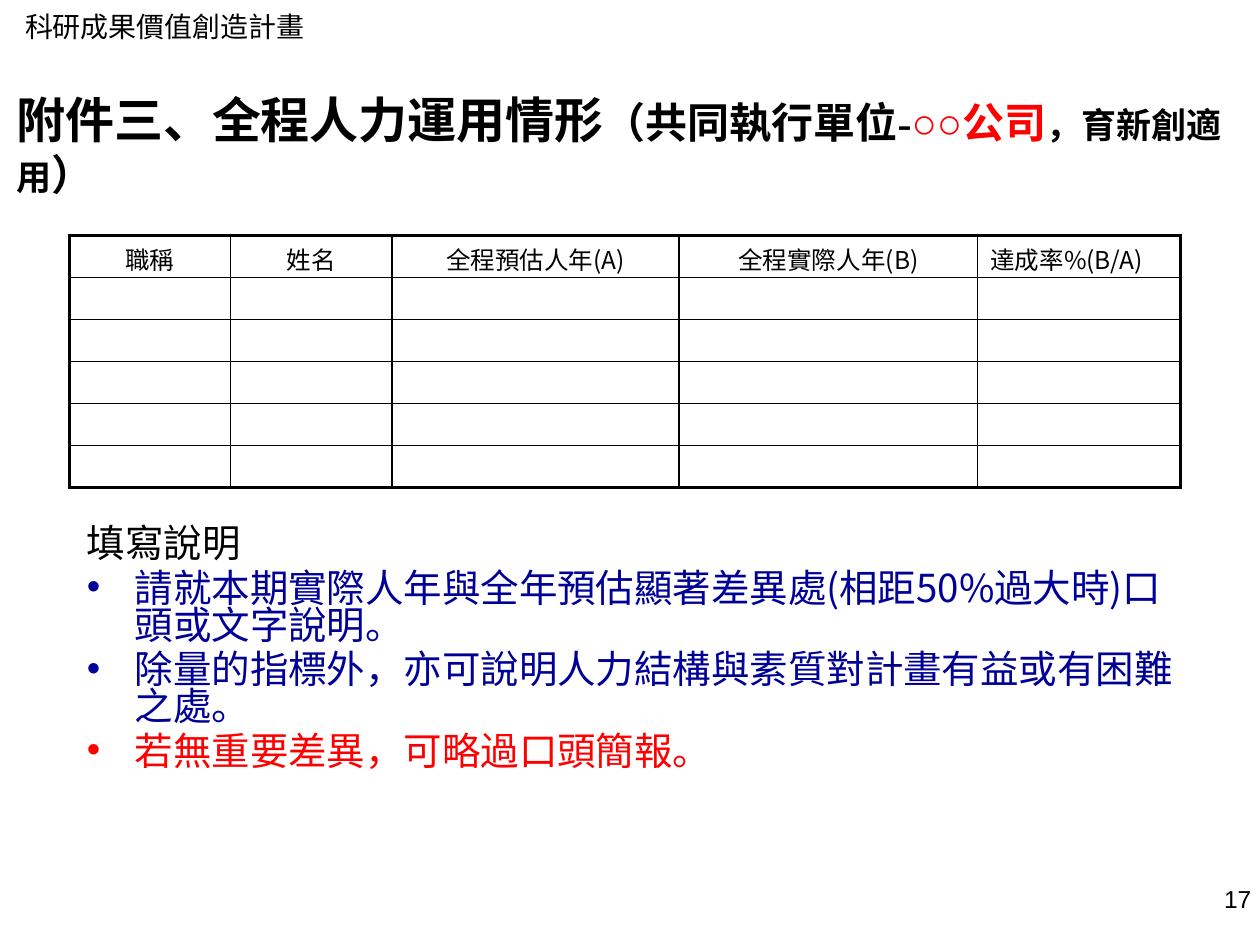
"""Build the staffing overview slide with its table and filling notes."""
import pptx
import pptx.dml.color
import pptx.enum.text
import pptx.oxml
import pptx.oxml.ns
import pptx.util
from lxml import etree

Pt, In = pptx.util.Pt, pptx.util.Inches
qn = pptx.oxml.ns.qn
enum = pptx.enum.text
NOTO = "Noto Sans CJK SC"

deck = pptx.Presentation()
deck.slide_width, deck.slide_height = In(10), In(7.5)
slide = deck.slides.add_slide(deck.slide_layouts[1])


def write(para, text, tint="000000", face=NOTO, **form):
    run = para.add_run()
    run.text = text
    for key, value in {"name": face, **form}.items():
        setattr(run.font, key, value)
    run.font.color.rgb = pptx.dml.color.RGBColor.from_string(tint)
    east = etree.SubElement(run.font._element, qn("a:ea"))
    east.set("typeface", NOTO)


def place(shape, left, top, wide, high):
    spot = {"left": left * deck.slide_width, "top": top * deck.slide_height,
            "width": wide * deck.slide_width, "height": high * deck.slide_height}
    for key, value in spot.items():
        setattr(shape, key, round(value / 100))
    if shape.has_text_frame:
        look = {"word_wrap": True, "auto_size": enum.MSO_AUTO_SIZE.NONE,
                "vertical_anchor": enum.MSO_ANCHOR.TOP}
        for key, value in look.items():
            setattr(shape.text_frame, key, value)
        return shape.text_frame


head = place(slide.shapes.title, 0.3, 8.8, 98.5, 13.07).paragraphs[0]
head.alignment = enum.PP_ALIGN.LEFT
for text, size, tint in [
    ("附件三、全程人力運用情形", 28, "000000"),
    ("（共同執行單位-", 24, "000000"),
    ("○○公司", 24, "FF0000"),
    ("，育新創適用", 20, "000000"),
    ("）", 24, "000000"),
]:
    write(head, text, tint, "Times New Roman", size=Pt(size), bold=True)

body = place(slide.placeholders[1], 5.9, 55.2, 88.2, 32.53)
notes = [
    ("填寫說明", "000000"),
    ("請就本期實際人年與全年預估顯著差異處(相距50%過大時)口頭或文字說明。", "000099"),
    ("除量的指標外，亦可說明人力結構與素質對計畫有益或有困難之處。", "000099"),
    ("若無重要差異，可略過口頭簡報。", "FF0000"),
]
for row, (text, tint) in enumerate(notes):
    para = body.add_paragraph() if row else body.paragraphs[0]
    form = {"line_spacing": 0.8, "space_before": Pt(4.4 if row else 0)}
    for key, value in form.items():
        setattr(para, key, value)
    props = para._p.get_or_add_pPr()
    props.set("marL", str(In(0.38)))
    props.set("indent", str(-In(0.38)))
    if row:
        etree.SubElement(props, qn("a:buFont")).set("typeface", "Arial")
        etree.SubElement(props, qn("a:buChar")).set("char", "•")
    else:
        etree.SubElement(props, qn("a:buNone"))
    write(para, text, tint, size=Pt(22))

heads = ["職稱", "姓名", "全程預估人年(A)", "全程實際人年(B)", "達成率%(B/A)"]
wides = [1.28, 1.28, 2.28, 2.37, 1.61]
rows, cols = 6, len(heads)
frame = slide.shapes.add_table(rows, cols, 0, 0, In(1), In(1))
place(frame, 5.5, 24.93, 88.2, 26.67)
grid = frame.table
grid.first_row = grid.horz_banding = False
for col, wide in enumerate(wides):
    grid.columns[col].width = In(wide)
for row in range(rows):
    grid.rows[row].height = In(2 / rows)
    for col in range(cols):
        cell = grid.cell(row, col)
        form = {"margin_top": 0 if row else In(0.04), "margin_bottom": 0,
                "vertical_anchor": enum.MSO_ANCHOR.MIDDLE}
        for key, value in form.items():
            setattr(cell, key, value)
        edges = {"L": col == 0, "R": col == cols - 1,
                 "T": row == 0, "B": row == rows - 1}
        for side, outer in edges.items():
            line = etree.SubElement(cell._tc.get_or_add_tcPr(), qn("a:ln" + side))
            line.set("w", str(Pt(2.25 if outer else 1)))
            fill = etree.SubElement(line, qn("a:solidFill"))
            etree.SubElement(fill, qn("a:srgbClr")).set("val", "000000")
        cell.fill.background()
        if row == 0:
            para = cell.text_frame.paragraphs[0]
            last = col == cols - 1
            para.alignment = enum.PP_ALIGN.LEFT if last else enum.PP_ALIGN.CENTER
            write(para, heads[col], size=Pt(14))

for text, size, face, side, spot in [
    ("科研成果價值創造計畫", 16, NOTO, enum.PP_ALIGN.LEFT, (1, 0.4, 24.5, 4.93)),
    ("17", 14, "Arial", enum.PP_ALIGN.RIGHT, (90.2, 92.93, 10.1, 6.93)),
]:
    label = place(slide.shapes.add_textbox(0, 0, 0, 0), *spot)
    label.word_wrap = False
    label.paragraphs[0].alignment = side
    write(label.paragraphs[0], text, face=face, size=Pt(size))

deck.save("out.pptx")
